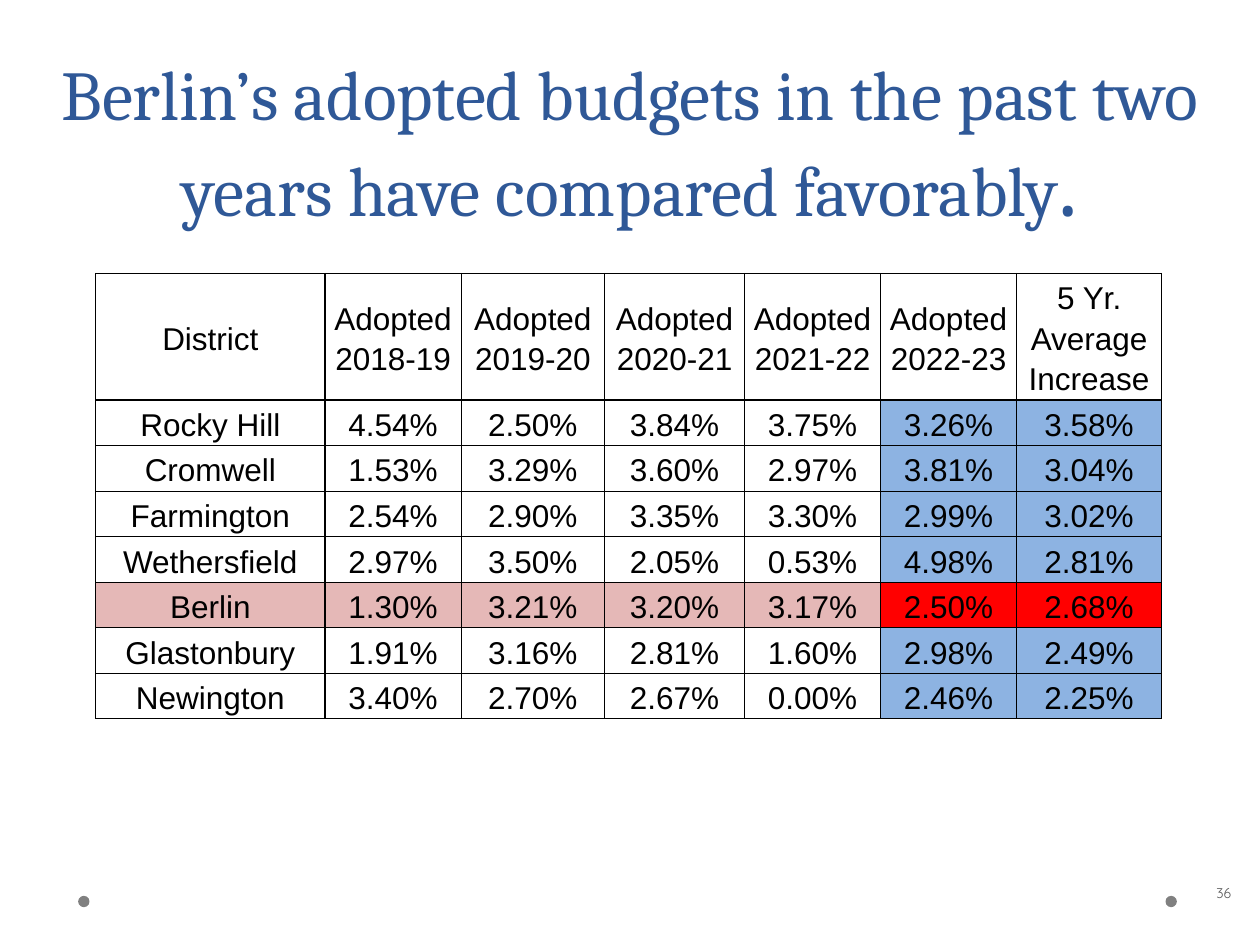
from dataclasses import dataclass

from lxml import etree
from pptx import Presentation
from pptx.dml.color import RGBColor
from pptx.enum.shapes import MSO_SHAPE
from pptx.enum.text import MSO_ANCHOR, MSO_AUTO_SIZE, PP_ALIGN
from pptx.oxml.ns import qn
from pptx.util import Inches, Pt

CENTER, RIGHT = PP_ALIGN.CENTER, PP_ALIGN.RIGHT
MIDDLE = MSO_ANCHOR.MIDDLE
OVAL = MSO_SHAPE.OVAL
TITLE_ONLY = 5


@dataclass(frozen=True)
class Theme:
    title_font: str = "Cambria"
    table_font: str = "Arial"
    number_font: str = "Quicksand"
    title_size: int = 40
    stop_size: int = 54
    table_size: int = 18
    number_size: int = 8
    title: str = "2F5897"
    ink: str = "000000"
    number: str = "595959"
    dot: str = "808080"
    recent: str = "8DB3E2"
    own_row: str = "E5B8B7"
    own_recent: str = "FF0000"
    plain: str = "FFFFFF"


THEME = Theme()

TITLE = "Berlin’s adopted budgets in the past two years have compared favorably"
PAGE_NUMBER = "36"
OWN_DISTRICT = "Berlin"
HEADER = ("District", "Adopted 2018-19", "Adopted 2019-20", "Adopted 2020-21",
          "Adopted 2021-22", "Adopted 2022-23", "5 Yr. Average Increase")
INCREASES = [
    ("Rocky Hill", "4.54%", "2.50%", "3.84%", "3.75%", "3.26%", "3.58%"),
    ("Cromwell", "1.53%", "3.29%", "3.60%", "2.97%", "3.81%", "3.04%"),
    ("Farmington", "2.54%", "2.90%", "3.35%", "3.30%", "2.99%", "3.02%"),
    ("Wethersfield", "2.97%", "3.50%", "2.05%", "0.53%", "4.98%", "2.81%"),
    ("Berlin", "1.30%", "3.21%", "3.20%", "3.17%", "2.50%", "2.68%"),
    ("Glastonbury", "1.91%", "3.16%", "2.81%", "1.60%", "2.98%", "2.49%"),
    ("Newington", "3.40%", "2.70%", "2.67%", "0.00%", "2.46%", "2.25%"),
]
RECENT_COLUMN = 5  # the latest year and the average stand out from here on

SLIDE_W, SLIDE_H = 10, 7.5
TITLE_BOX = (0.34, 0.42, 9.32, 1.29)
NUMBER_BOX = (9.27, 6.8, 0.6, 0.57)
TABLE_LEFT, TABLE_TOP = 0.76, 2.17
COLUMN_WIDTHS = (1.82, 1.08, 1.14, 1.11, 1.08, 1.08, 1.15)
HEADER_HEIGHT, ROW_HEIGHT = 1.0, 0.36
DOT_LEFTS, DOT_TOP, DOT_SIZE = (0.62, 9.25), 7.11, 0.09


def inches(box):
    return [Inches(length) for length in box]


def write(paragraph, text, *, font, size, color, align=CENTER, spacing=None):
    """Append one formatted run to the paragraph."""
    paragraph.alignment = align
    paragraph.line_spacing = spacing
    run = paragraph.add_run()
    run.text = text
    run.font.name = font
    run.font.size = Pt(size)
    run.font.color.rgb = RGBColor.from_string(color)


def set_frame(frame, margin_x, margin_y):
    frame.word_wrap = True
    frame.auto_size = MSO_AUTO_SIZE.NONE
    frame.vertical_anchor = MIDDLE
    frame.margin_left = frame.margin_right = Inches(margin_x)
    frame.margin_top = frame.margin_bottom = Inches(margin_y)


def add_dots(slide):
    for left in DOT_LEFTS:
        dot = slide.shapes.add_shape(
            OVAL, *inches((left, DOT_TOP, DOT_SIZE, DOT_SIZE)))
        dot.shadow.inherit = False
        dot.fill.solid()
        dot.fill.fore_color.rgb = RGBColor.from_string(THEME.dot)
        dot.line.fill.background()


def add_number(slide):
    number = slide.shapes.add_textbox(*inches(NUMBER_BOX))
    set_frame(number.text_frame, 0.1, 0.1)
    write(number.text_frame.paragraphs[0], PAGE_NUMBER, align=RIGHT,
          font=THEME.number_font, size=THEME.number_size, color=THEME.number)


def fill_title(slide):
    title = slide.shapes.title
    title.left, title.top, title.width, title.height = inches(TITLE_BOX)
    set_frame(title.text_frame, 0.1, 0.05)
    for text, size in ((TITLE, THEME.title_size), (".", THEME.stop_size)):
        write(title.text_frame.paragraphs[0], text, font=THEME.title_font,
              size=size, color=THEME.title, spacing=Pt(58))


def cell_color(district, column):
    """Return the cell's fill colour, or None where it stays clear."""
    own, recent = district == OWN_DISTRICT, column >= RECENT_COLUMN
    if own:
        return THEME.own_recent if recent else THEME.own_row
    if district == HEADER[0] or column < RECENT_COLUMN - 1:
        return None
    return THEME.recent if recent else THEME.plain


def add_borders(cell):
    properties = cell._tc.get_or_add_tcPr()
    for position, side in enumerate(("a:lnL", "a:lnR", "a:lnT", "a:lnB")):
        line = etree.Element(qn(side), w=str(Pt(0.75)))
        fill = etree.SubElement(line, qn("a:solidFill"))
        etree.SubElement(fill, qn("a:srgbClr"), val=THEME.ink)
        properties.insert(position, line)


def add_table(slide):
    rows = [HEADER, *INCREASES]
    heights = [HEADER_HEIGHT] + [ROW_HEIGHT] * len(INCREASES)
    box = (TABLE_LEFT, TABLE_TOP, sum(COLUMN_WIDTHS), sum(heights))
    table = slide.shapes.add_table(
        len(rows), len(HEADER), *inches(box)).table
    table.first_row = table.horz_banding = False
    for column, width in zip(table.columns, COLUMN_WIDTHS):
        column.width = Inches(width)
    for r, (values, height) in enumerate(zip(rows, heights)):
        table.rows[r].height = Inches(height)
        for c, value in enumerate(values):
            cell = table.cell(r, c)
            cell.vertical_anchor = MIDDLE
            cell.margin_left = cell.margin_right = Inches(0.03)
            cell.margin_top = cell.margin_bottom = Inches(0.02)
            color = cell_color(values[0], c)
            if color:
                cell.fill.solid()
                cell.fill.fore_color.rgb = RGBColor.from_string(color)
            else:
                cell.fill.background()
            add_borders(cell)
            write(cell.text_frame.paragraphs[0], value, spacing=1.15,
                  font=THEME.table_font, size=THEME.table_size,
                  color=THEME.ink)


def main():
    deck = Presentation()
    deck.slide_width, deck.slide_height = inches((SLIDE_W, SLIDE_H))
    slide = deck.slides.add_slide(deck.slide_layouts[TITLE_ONLY])
    add_dots(slide)
    add_number(slide)
    fill_title(slide)
    add_table(slide)
    deck.save("out.pptx")


if __name__ == "__main__":
    main()
